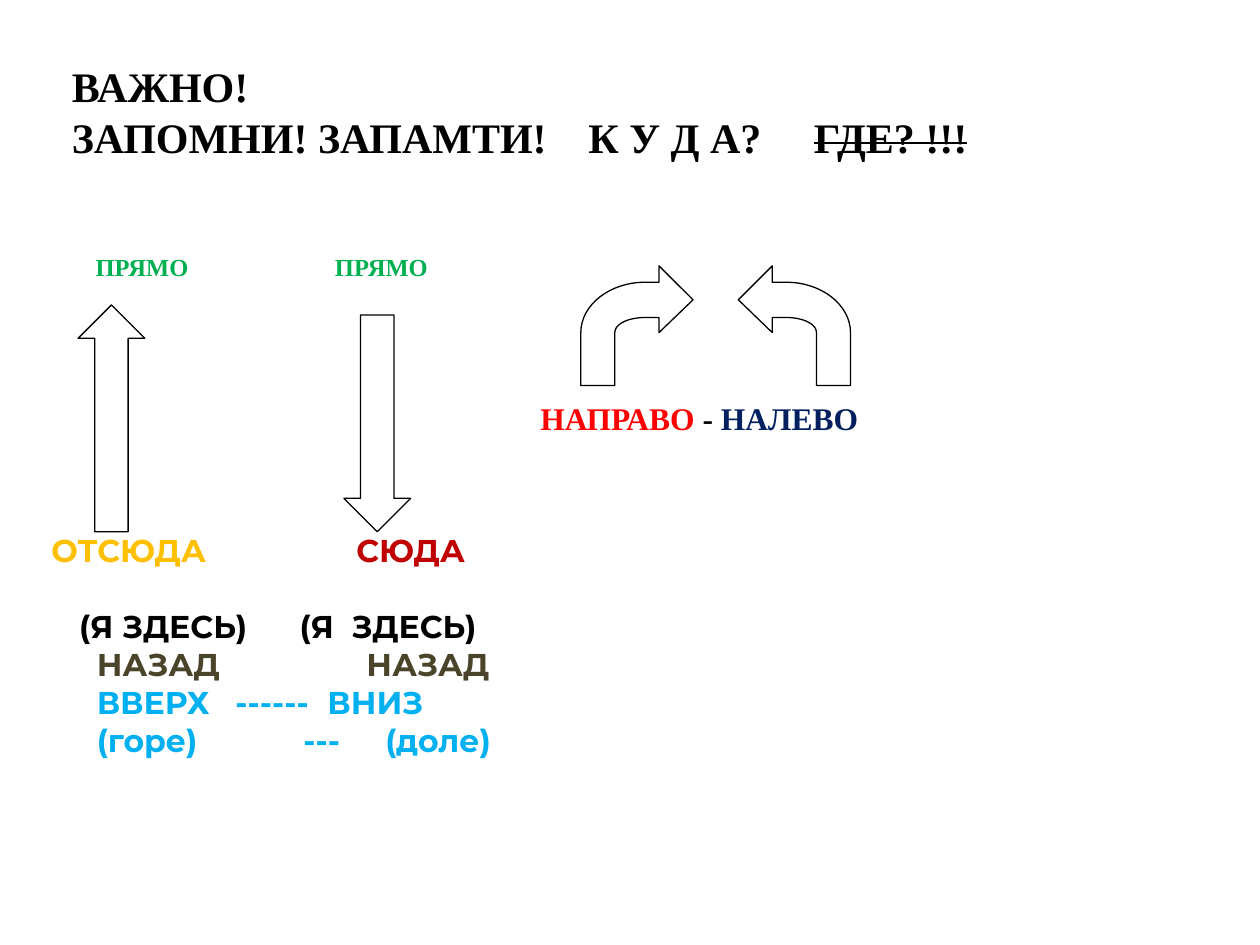
from dataclasses import dataclass

import pptx
import pptx.dml.color
import pptx.enum.shapes
import pptx.enum.text
import pptx.oxml
import pptx.oxml.ns
import pptx.util

Inches = pptx.util.Inches
Pt = pptx.util.Pt
MSO_SHAPE = pptx.enum.shapes.MSO_SHAPE
MSO_ANCHOR = pptx.enum.text.MSO_ANCHOR


@dataclass(frozen=True)
class Theme:
    serif: str = "Times New Roman"
    sans: str = "Montserrat"
    black: str = "000000"
    white: str = "FFFFFF"
    green: str = "00B050"
    red: str = "FF0000"
    navy: str = "002060"
    amber: str = "FFC000"
    crimson: str = "C00000"
    olive: str = "4A452A"
    sky: str = "00B0F0"
    title_size: int = 24
    text_size: int = 18
    label_size: int = 14
    outline: float = 0.75


THEME = Theme()


def rgb(color):
    return pptx.dml.color.RGBColor.from_string(color)


def set_tabs(paragraph, positions):
    tab_list = pptx.oxml.parse_xml(f"<a:tabLst {pptx.oxml.ns.nsdecls('a')}/>")
    for position in positions:
        tab = pptx.oxml.parse_xml(f"<a:tab {pptx.oxml.ns.nsdecls('a')}/>")
        tab.set("pos", str(Inches(position)))
        tab.set("algn", "l")
        tab_list.append(tab)
    paragraph._p.get_or_add_pPr().append(tab_list)


def write_rows(text_frame, rows, font_name, size):
    for index, cells in enumerate(rows):
        paragraph = text_frame.paragraphs[0] if index == 0 else text_frame.add_paragraph()
        paragraph.alignment = pptx.enum.text.PP_ALIGN.LEFT
        set_tabs(paragraph, [position for position, _, _ in cells if position])
        for position, text, color in cells:
            run = paragraph.add_run()
            run.text = f"\t{text}" if position else text
            run.font.name = font_name
            run.font.size = Pt(size)
            run.font.bold = True
            run.font.color.rgb = rgb(color)


def add_rows(slide, box, rows, font_name, size, anchor=MSO_ANCHOR.TOP, top_inset=0.05):
    text_frame = slide.shapes.add_textbox(*map(Inches, box)).text_frame
    text_frame.word_wrap = True
    text_frame.vertical_anchor = anchor
    text_frame.margin_top = Inches(top_inset)
    write_rows(text_frame, rows, font_name, size)
    return text_frame


def add_title(slide):
    title = slide.shapes.title
    title.left, title.top, title.width, title.height = map(Inches, (0.47, 0.23, 9.53, 1.4))
    text_frame = title.text_frame
    text_frame.auto_size = pptx.enum.text.MSO_AUTO_SIZE.NONE
    text_frame.vertical_anchor = MSO_ANCHOR.TOP
    text_frame.margin_top = Inches(0.25)
    rows = [
        [(0, "ВАЖНО!", THEME.black)],
        [
            (0, "ЗАПОМНИ! ЗАПАМТИ!", THEME.black),
            (4.1, "К У Д А?", THEME.black),
            (5.89, "", THEME.black),
            (0, "ГДЕ? !!!", THEME.black),
        ],
    ]
    write_rows(text_frame, rows, THEME.serif, THEME.title_size)
    for paragraph in text_frame.paragraphs:
        paragraph.line_spacing = Pt(29)
    struck_run = text_frame.paragraphs[-1].runs[-1]
    struck_run._r.get_or_add_rPr().set("strike", "sngStrike")


def style_arrow(shape):
    shape.shadow.inherit = False
    shape.fill.solid()
    shape.fill.fore_color.rgb = rgb(THEME.white)
    shape.line.color.rgb = rgb(THEME.black)
    shape.line.width = Pt(THEME.outline)


def add_straight_arrow(slide, kind, box):
    arrow = slide.shapes.add_shape(kind, *map(Inches, box))
    arrow.adjustments[0] = 0.5
    arrow.adjustments[1] = 0.5
    style_arrow(arrow)


def curve(start, control_1, control_2, end, steps=16):
    points = []
    for step in range(steps + 1):
        t = step / steps
        weights = ((1 - t) ** 3, 3 * t * (1 - t) ** 2, 3 * t ** 2 * (1 - t), t ** 3)
        corners = (start, control_1, control_2, end)
        points.append(tuple(sum(w * c[axis] for w, c in zip(weights, corners)) for axis in (0, 1)))
    return points


def right_turn_outline():
    outer = curve((5.12, 2.24), (4.84, 2.24), (4.61, 2.42), (4.61, 2.64))
    inner = curve((4.88, 2.64), (4.88, 2.57), (4.99, 2.52), (5.12, 2.52))
    head_start = [(5.5, 2.38), (5.23, 2.11), (5.23, 2.24)]
    head_end = [(5.23, 2.52), (5.23, 2.64)]
    return head_start + outer + [(4.61, 3.06), (4.88, 3.06)] + inner + head_end


def add_turn_arrow(slide, outline):
    points = [(Inches(x), Inches(y)) for x, y in outline]
    builder = slide.shapes.build_freeform(*points[0])
    builder.add_line_segments(points[1:], close=True)
    style_arrow(builder.convert_to_shape())


def add_directions(slide):
    rows = [
        [(0, "ОТСЮДА", THEME.amber), (2.42, "СЮДА", THEME.crimson)],
        [(0.22, "(Я ЗДЕСЬ)", THEME.black), (1.97, "(Я  ЗДЕСЬ)", THEME.black)],
        [(0.36, "НАЗАД", THEME.olive), (2.5, "НАЗАД", THEME.olive)],
        [(0.36, "ВВЕРХ", THEME.sky), (1.46, "------", THEME.sky), (2.19, "ВНИЗ", THEME.sky)],
        [(0.36, "(горе)", THEME.sky), (2, "---", THEME.sky), (2.65, "(доле)", THEME.sky)],
    ]
    text_frame = add_rows(slide, (0.31, 1.56, 9.69, 4.51), rows,
                          THEME.sans, THEME.text_size, MSO_ANCHOR.BOTTOM)
    text_frame.paragraphs[0].space_after = Pt(22)


def main():
    presentation = pptx.Presentation()
    presentation.slide_width = Inches(10)
    presentation.slide_height = Inches(7.5)
    slide = presentation.slides.add_slide(presentation.slide_layouts[5])

    add_straight_arrow(slide, MSO_SHAPE.UP_ARROW, (0.62, 2.42, 0.53, 1.8))
    add_straight_arrow(slide, MSO_SHAPE.DOWN_ARROW, (2.73, 2.5, 0.53, 1.72))
    right_turn = right_turn_outline()
    mirror_sum = 11.36
    add_turn_arrow(slide, right_turn)
    add_turn_arrow(slide, [(mirror_sum - x, y) for x, y in right_turn])

    add_title(slide)
    straight_labels = [[(0.11, "ПРЯМО", THEME.green), (2.01, "ПРЯМО", THEME.green)]]
    add_rows(slide, (0.55, 1.56, 3.52, 0.89), straight_labels,
             THEME.serif, THEME.label_size, top_inset=0.44)
    add_directions(slide)
    turn_labels = [[(0.13, "НАПРАВО ", THEME.red), (0, "- ", THEME.black), (0, "НАЛЕВО", THEME.navy)]]
    add_rows(slide, (4.06, 3.12, 3.52, 0.4), turn_labels, THEME.serif, THEME.text_size)

    presentation.save("out.pptx")


if __name__ == "__main__":
    main()
